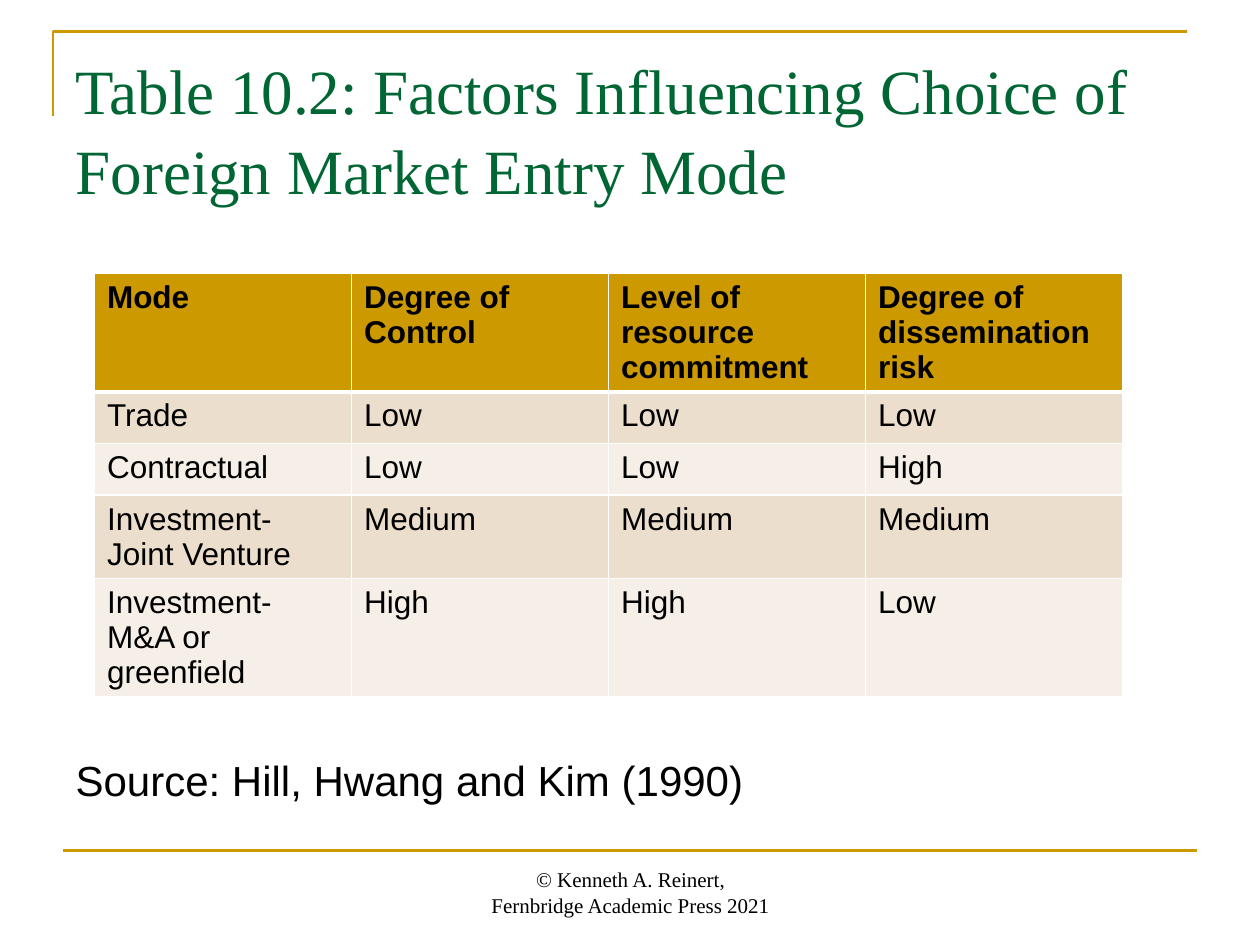
from dataclasses import dataclass

from lxml import etree
from pptx import Presentation
from pptx.dml.color import RGBColor
from pptx.enum.shapes import MSO_CONNECTOR
from pptx.enum.text import MSO_ANCHOR, MSO_AUTO_SIZE, PP_ALIGN
from pptx.oxml.ns import qn
from pptx.util import Inches, Pt

LEFT, CENTER = PP_ALIGN.LEFT, PP_ALIGN.CENTER
TOP, BOTTOM = MSO_ANCHOR.TOP, MSO_ANCHOR.BOTTOM
STRAIGHT = MSO_CONNECTOR.STRAIGHT
TITLE_AND_CONTENT = 1


@dataclass(frozen=True)
class Theme:
    serif: str = "Times New Roman"
    sans: str = "Arial"
    gold: str = "CC9900"
    green: str = "006633"
    black: str = "000000"
    white: str = "FFFFFF"
    bands: tuple = ("ECDECC", "F6EFE7")
    title_size: int = 36
    body_size: int = 24
    table_size: int = 18
    footer_size: int = 12
    rule: float = 1.5


THEME = Theme()
WIDTH, HEIGHT = 10, 7.5
MARGIN = WIDTH * 0.05
CONTENT = WIDTH - 2 * MARGIN

TITLE = "Table 10.2: Factors Influencing Choice of Foreign Market Entry Mode"
SOURCE = "Source: Hill, Hwang and Kim (1990)"
FOOTER = ["© Kenneth A. Reinert,", "Fernbridge Academic Press 2021"]
MODES = [
    ["Mode", "Degree of Control", "Level of resource commitment",
     "Degree of dissemination risk"],
    ["Trade", "Low", "Low", "Low"],
    ["Contractual", "Low", "Low", "High"],
    ["Investment- Joint Venture", "Medium", "Medium", "Medium"],
    ["Investment- M&A or greenfield", "High", "High", "Low"],
]
ROW_HEIGHTS = [0.93, 0.41, 0.41, 0.66, 0.93]


def set_values(target, values):
    for name, value in values.items():
        setattr(target, name, value)


def write(frame, lines, font, size, color, bold=False, align=LEFT, **para_values):
    """Fill a text frame with one formatted paragraph per line."""
    for index, line in enumerate(lines):
        para = frame.paragraphs[0] if index == 0 else frame.add_paragraph()
        set_values(para, {"alignment": align, **para_values})
        span = para.add_run()
        span.text = line
        set_values(span.font, {"name": font, "size": Pt(size), "bold": bold})
        span.font.color.rgb = RGBColor.from_string(color)


def place(box, left, top, width, height, **frame_values):
    """Position a text shape and set up its frame."""
    set_values(box, {"left": Inches(left), "top": Inches(top),
                     "width": Inches(width), "height": Inches(height)})
    set_values(box.text_frame, {"word_wrap": True,
                                "auto_size": MSO_AUTO_SIZE.NONE, **frame_values})
    return box.text_frame


def style_line(shape):
    shape.line.color.rgb = RGBColor.from_string(THEME.gold)
    shape.line.width = Pt(THEME.rule)


def add_corner(page):
    """Open bracket around the top left of the title."""
    left, top = 0.42, 0.25
    builder = page.shapes.build_freeform(Inches(left), Inches(top + 0.67))
    builder.add_line_segments([(Inches(left), Inches(top)),
                               (Inches(left + CONTENT), Inches(top))], close=False)
    corner = builder.convert_to_shape()
    corner.shadow.inherit = False
    corner.fill.background()
    style_line(corner)


def add_rule(page):
    """Line above the footer."""
    y = Inches(HEIGHT * 0.9)
    rule = page.shapes.add_connector(
        STRAIGHT, Inches(MARGIN), y, Inches(WIDTH - MARGIN), y)
    style_line(rule)
    etree.SubElement(rule._element.spPr, qn("a:effectLst"))


def add_title(page):
    frame = place(page.shapes.title, MARGIN, 0.3, CONTENT, 1.25,
                  vertical_anchor=TOP, margin_top=Inches(0.08))
    write(frame, [TITLE], THEME.serif, THEME.title_size, THEME.green,
          line_spacing=1.05)


def add_source(page):
    frame = place(page.placeholders[1], MARGIN, 1.75, CONTENT, 4.95,
                  vertical_anchor=BOTTOM, margin_bottom=Inches(0.31))
    write(frame, [SOURCE], THEME.sans, THEME.body_size, THEME.black)
    # Plain paragraph: no bullet and no hanging indent
    settings = frame.paragraphs[0]._p.get_or_add_pPr()
    settings.set("marL", "0")
    settings.set("indent", "0")
    etree.SubElement(settings, qn("a:buNone"))


def add_borders(cell, widths):
    """Draw white cell borders, placed ahead of the cell's fill."""
    settings = cell._tc.get_or_add_tcPr()
    for index, (side, width) in enumerate(widths.items()):
        line = etree.Element(qn(f"a:{side}"), w=str(Pt(width)))
        fill = etree.SubElement(line, qn("a:solidFill"))
        etree.SubElement(fill, qn("a:srgbClr"), val=THEME.white)
        settings.insert(index, line)


def add_modes_table(page):
    columns = len(MODES[0])
    table = page.shapes.add_table(
        len(MODES), columns, Inches(0.75), Inches(2.17),
        Inches(columns * 2.04), Inches(sum(ROW_HEIGHTS))).table
    for row, height in zip(table.rows, ROW_HEIGHTS):
        row.height = Inches(height)
    for r, words in enumerate(MODES):
        header = r == 0
        fill = THEME.gold if header else THEME.bands[(r - 1) % 2]
        borders = {"lnL": 1, "lnR": 1, "lnT": 3 if r == 1 else 1,
                   "lnB": 3 if header else 1}
        for c, text in enumerate(words):
            cell = table.cell(r, c)
            cell.fill.solid()
            cell.fill.fore_color.rgb = RGBColor.from_string(fill)
            add_borders(cell, borders)
            write(cell.text_frame, [text], THEME.sans, THEME.table_size,
                  THEME.black, bold=header)


def add_footer(page):
    box = page.shapes.add_textbox(0, 0, 0, 0)
    frame = place(box, 3.42, 6.83, 3.17, 0.5, vertical_anchor=BOTTOM)
    write(frame, FOOTER, THEME.serif, THEME.footer_size, THEME.black, align=CENTER)


def main():
    deck = Presentation()
    deck.slide_width, deck.slide_height = Inches(WIDTH), Inches(HEIGHT)
    page = deck.slides.add_slide(deck.slide_layouts[TITLE_AND_CONTENT])
    for add_part in (add_corner, add_rule, add_title, add_source,
                     add_modes_table, add_footer):
        add_part(page)
    deck.save("out.pptx")


if __name__ == "__main__":
    main()
